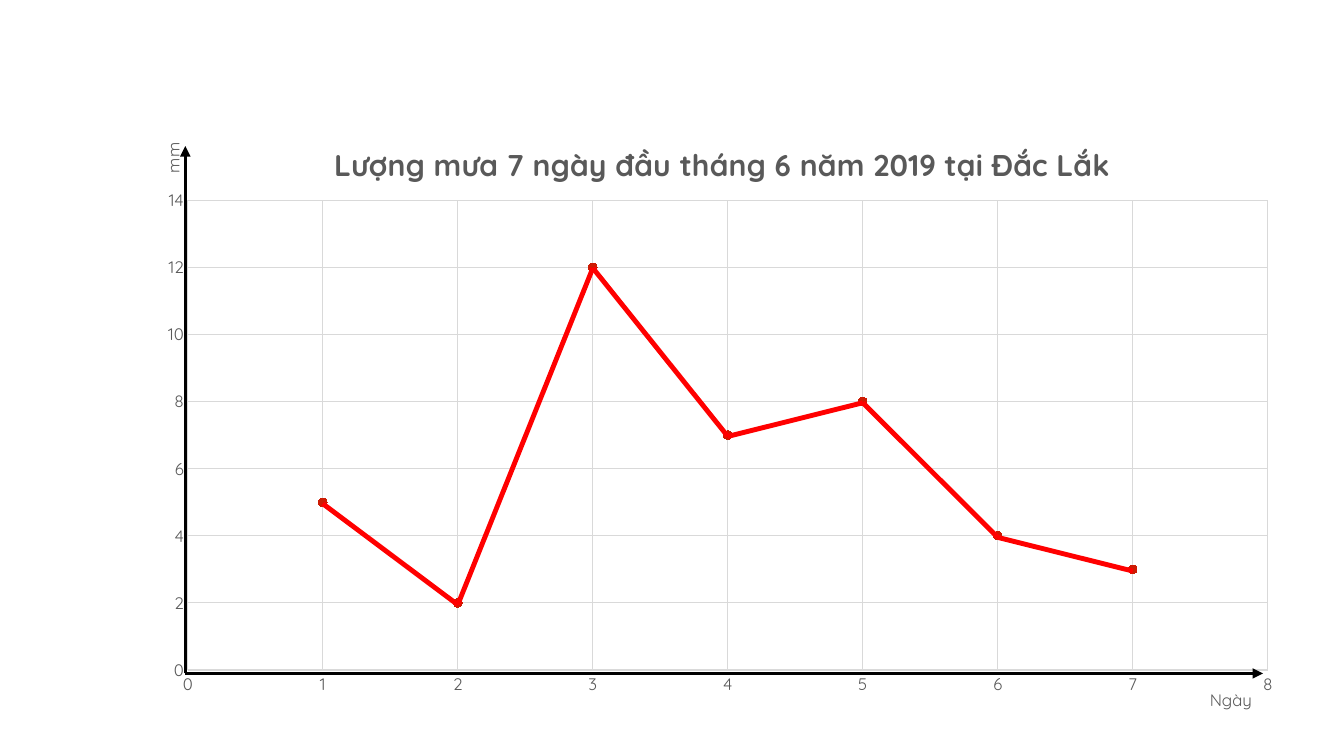
from itertools import pairwise

from lxml import etree
from pptx import Presentation
from pptx import util as u
from pptx.chart.data import XyChartData
from pptx.dml.color import RGBColor
from pptx.enum import chart as charts, shapes
from pptx.oxml.ns import qn

FONT = "Quicksand"
DAYS = [1, 2, 3, 4, 5, 6, 7]
RAINFALL = [5, 2, 12, 7, 8, 4, 3]
MAX_DAY, MAX_RAIN = 8, 14
LEFT, TOP, WIDTH, HEIGHT = 3.25, 2.84, 29.08, 15.19
PLOT = {"x": 0.051, "y": 0.146, "w": 0.936, "h": 0.782}


def color(value):
    return RGBColor.from_string(value)


def set_layout(element, index, **fractions):
    """Place a chart part at fractions of the chart's size."""
    for old in element.findall(qn("c:layout")):
        element.remove(old)
    layout = etree.Element(qn("c:layout"))
    manual = etree.SubElement(layout, qn("c:manualLayout"))
    if "w" in fractions:
        etree.SubElement(manual, qn("c:layoutTarget")).set("val", "inner")
    for side in "xy":
        etree.SubElement(manual, qn(f"c:{side}Mode")).set("val", "edge")
    for side, fraction in fractions.items():
        etree.SubElement(manual, qn(f"c:{side}")).set("val", str(fraction))
    element.insert(index, layout)


deck = Presentation()
deck.slide_width, deck.slide_height = u.Cm(33.87), u.Cm(19.05)
page = deck.slides.add_slide(deck.slide_layouts[6])

# Scatter chart
data = XyChartData()
rain = data.add_series("Series 1")
for day, amount in zip(DAYS, RAINFALL):
    rain.add_data_point(day, amount)
chart = page.shapes.add_chart(
    charts.XL_CHART_TYPE.XY_SCATTER,
    u.Cm(LEFT), u.Cm(TOP), u.Cm(WIDTH), u.Cm(HEIGHT), data).chart
chart.has_legend = False
chart.font.name = FONT
chart.font.size = u.Pt(10)
chart.font.color.rgb = color("000000")
chart.plots[0].vary_by_categories = False
set_layout(chart.element.find(".//" + qn("c:plotArea")), 0, **PLOT)

# Markers
series = chart.plots[0].series[0]
series.format.line.fill.background()
series.marker.style = charts.XL_MARKER_STYLE.CIRCLE
series.marker.size = 6
series.marker.format.fill.solid()
series.marker.format.fill.fore_color.rgb = color("CD1B04")
series.marker.format.line.color.rgb = color("CD1B04")

# Axes
for axis, top, step in ((chart.category_axis, MAX_DAY, 1),
                        (chart.value_axis, MAX_RAIN, 2)):
    axis.minimum_scale, axis.maximum_scale, axis.major_unit = 0, top, step
    axis.major_tick_mark = axis.minor_tick_mark = charts.XL_TICK_MARK.NONE
    axis.has_major_gridlines = True
    axis.major_gridlines.format.line.color.rgb = color("D9D9D9")
    axis.major_gridlines.format.line.width = u.Pt(0.75)
    axis.tick_labels.font.name = FONT
    axis.tick_labels.font.size = u.Pt(12)
    axis.tick_labels.font.color.rgb = color("595959")
chart.category_axis.format.line.color.rgb = color("D9D9D9")
chart.category_axis.format.line.width = u.Pt(1)
chart.value_axis.format.line.fill.background()

# Titles
for owner, words, size, bold, x, y in (
        (chart, "Lượng mưa 7 ngày đầu tháng 6 năm 2019 tại Đắc Lắk",
         21.5, True, 0.173, 0.04),
        (chart.category_axis, "Ngày", 12, False, 0.934, 0.952),
        (chart.value_axis, "mm", 12, False, 0.025, 0.045)):
    owner.has_title = True
    title = owner.chart_title if owner is chart else owner.axis_title
    para = title.text_frame.paragraphs[0]
    para.text = words
    para.font.name = FONT
    para.font.size = u.Pt(size)
    para.font.bold = bold
    para.font.color.rgb = color("595959")
    set_layout(title.element, 1, x=x, y=y)

# Arrows along the axes, then the rainfall line
origin = (4.67, 16.97)
strokes = [(origin, (31.83, 16.97), "000000", 2.5, True),
           (origin, (4.67, 3.68), "000000", 2.5, True)]
plot_left = LEFT + PLOT["x"] * WIDTH
plot_bottom = TOP + (PLOT["y"] + PLOT["h"]) * HEIGHT
day_width = PLOT["w"] * WIDTH / MAX_DAY
rain_height = PLOT["h"] * HEIGHT / MAX_RAIN
points = [(plot_left + day * day_width, plot_bottom - amount * rain_height)
          for day, amount in zip(DAYS, RAINFALL)]
strokes += [(start, end, "FF0000", 3.5, False)
            for start, end in pairwise(points)]

for start, end, shade, weight, arrow in strokes:
    stroke = page.shapes.add_connector(
        shapes.MSO_CONNECTOR.STRAIGHT, *map(u.Cm, start + end))
    stroke.line.color.rgb = color(shade)
    stroke.line.width = u.Pt(weight)
    if arrow:
        etree.SubElement(stroke.line._get_or_add_ln(),
                         qn("a:tailEnd")).set("type", "triangle")
    etree.SubElement(stroke._element.spPr, qn("a:effectLst"))

deck.save("out.pptx")
